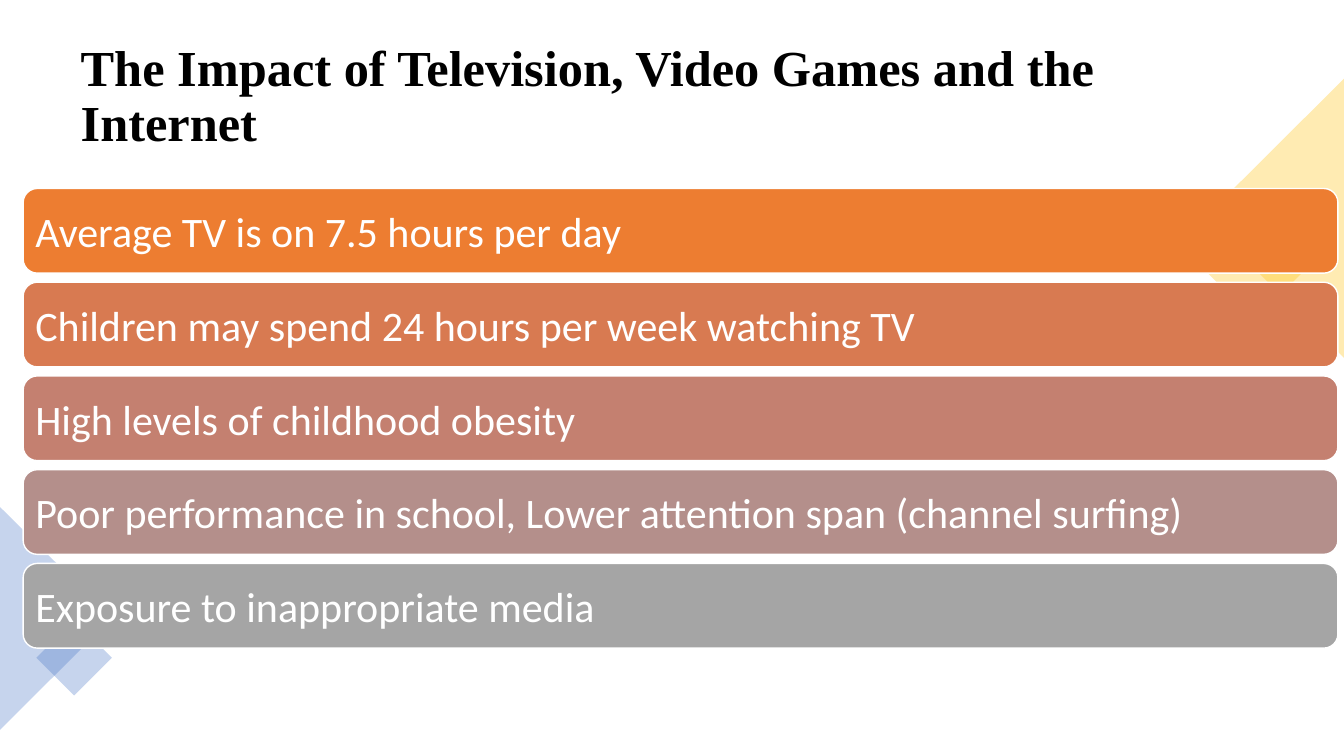
import pptx
import pptx.dml.color
import pptx.enum.shapes
import pptx.enum.text
import pptx.oxml
import pptx.util

Inches = pptx.util.Inches
Pt = pptx.util.Pt
RGBColor = pptx.dml.color.RGBColor
MSO_SHAPE = pptx.enum.shapes.MSO_SHAPE
PP_ALIGN = pptx.enum.text.PP_ALIGN
MSO_ANCHOR = pptx.enum.text.MSO_ANCHOR
MSO_AUTO_SIZE = pptx.enum.text.MSO_AUTO_SIZE

BLACK = RGBColor(0x00, 0x00, 0x00)
WHITE = RGBColor(0xFF, 0xFF, 0xFF)
GOLD = RGBColor(0xFF, 0xC0, 0x00)
BLUE = RGBColor(0x44, 0x72, 0xC4)
ORANGE = RGBColor(0xED, 0x7D, 0x31)
COPPER = RGBColor(0xD8, 0x7A, 0x51)
ROSE = RGBColor(0xC4, 0x80, 0x70)
MAUVE = RGBColor(0xB4, 0x8F, 0x8B)
GREY = RGBColor(0xA5, 0xA5, 0xA5)


def set_attributes(target, values):
    for attribute, value in values.items():
        setattr(target, attribute, value)


def add_filled(preset, box, color):
    shape = slide.shapes.add_shape(preset, *[Inches(length) for length in box])
    shape.shadow.inherit = False
    shape.fill.solid()
    shape.fill.fore_color.rgb = color
    return shape


presentation = pptx.Presentation()
presentation.slide_width = Inches(13.33)
presentation.slide_height = Inches(7.5)
slide = presentation.slides.add_slide(presentation.slide_layouts[5])

heading = slide.shapes.title
set_attributes(heading, {
    "left": Inches(0.7), "top": Inches(0.35),
    "width": Inches(11.93), "height": Inches(1.24),
})
set_attributes(heading.text_frame, {
    "text": "The Impact of Television, Video Games and the Internet",
    "word_wrap": True,
    "auto_size": MSO_AUTO_SIZE.NONE,
    "vertical_anchor": MSO_ANCHOR.MIDDLE,
})
heading_line = heading.text_frame.paragraphs[0]
set_attributes(heading_line, {"alignment": PP_ALIGN.LEFT, "line_spacing": 0.9})
set_attributes(heading_line.runs[0].font, {
    "name": "Times New Roman", "size": Pt(36), "bold": True,
})
heading_line.runs[0].font.color.rgb = BLACK

corner_accents = [
    (MSO_SHAPE.RECTANGLE, (12.09, 2.32, 0.71, 0.71), 45, GOLD),
    (MSO_SHAPE.ISOSCELES_TRIANGLE, (11.25, 1.47, 2.77, 1.39), 270, GOLD),
    (MSO_SHAPE.ISOSCELES_TRIANGLE, (-0.55, 5.58, 2.21, 1.11), 90, BLUE),
    (MSO_SHAPE.RECTANGLE, (0.47, 6.26, 0.53, 0.53), 45, BLUE),
]
for preset, box, angle, color in corner_accents:
    accent = add_filled(preset, box, color)
    accent.rotation = angle
    accent.line.fill.background()
    color_element = accent.fill._xPr.find(".//" + pptx.oxml.ns.qn("a:srgbClr"))
    alpha = pptx.oxml.parse_xml(
        '<a:alpha xmlns:a="http://schemas.openxmlformats.org/drawingml/2006/main" val="30000"/>'
    )
    color_element.append(alpha)

impacts = [
    ("Average TV is on 7.5 hours per day", ORANGE),
    ("Children may spend 24 hours per week watching TV", COPPER),
    ("High levels of childhood obesity", ROSE),
    ("Poor performance in school, Lower attention span (channel surfing)", MAUVE),
    ("Exposure to inappropriate media", GREY),
]
first_top = 1.87
bar_step = 0.93
for index, (statement, color) in enumerate(impacts):
    box = (0.23, first_top + index * bar_step, 13.04, 0.84)
    bar = add_filled(MSO_SHAPE.ROUNDED_RECTANGLE, box, color)
    bar.line.color.rgb = WHITE
    bar.line.width = Pt(1)
    set_attributes(bar.text_frame, {
        "text": statement,
        "word_wrap": True,
        "vertical_anchor": MSO_ANCHOR.MIDDLE,
        "margin_left": Inches(0.08), "margin_right": Inches(0.08),
        "margin_top": Inches(0.08), "margin_bottom": Inches(0.08),
    })
    bar_line = bar.text_frame.paragraphs[0]
    bar_line.alignment = PP_ALIGN.LEFT
    set_attributes(bar_line.runs[0].font, {"name": "Calibri", "size": Pt(30)})
    bar_line.runs[0].font.color.rgb = WHITE

presentation.save("out.pptx")
